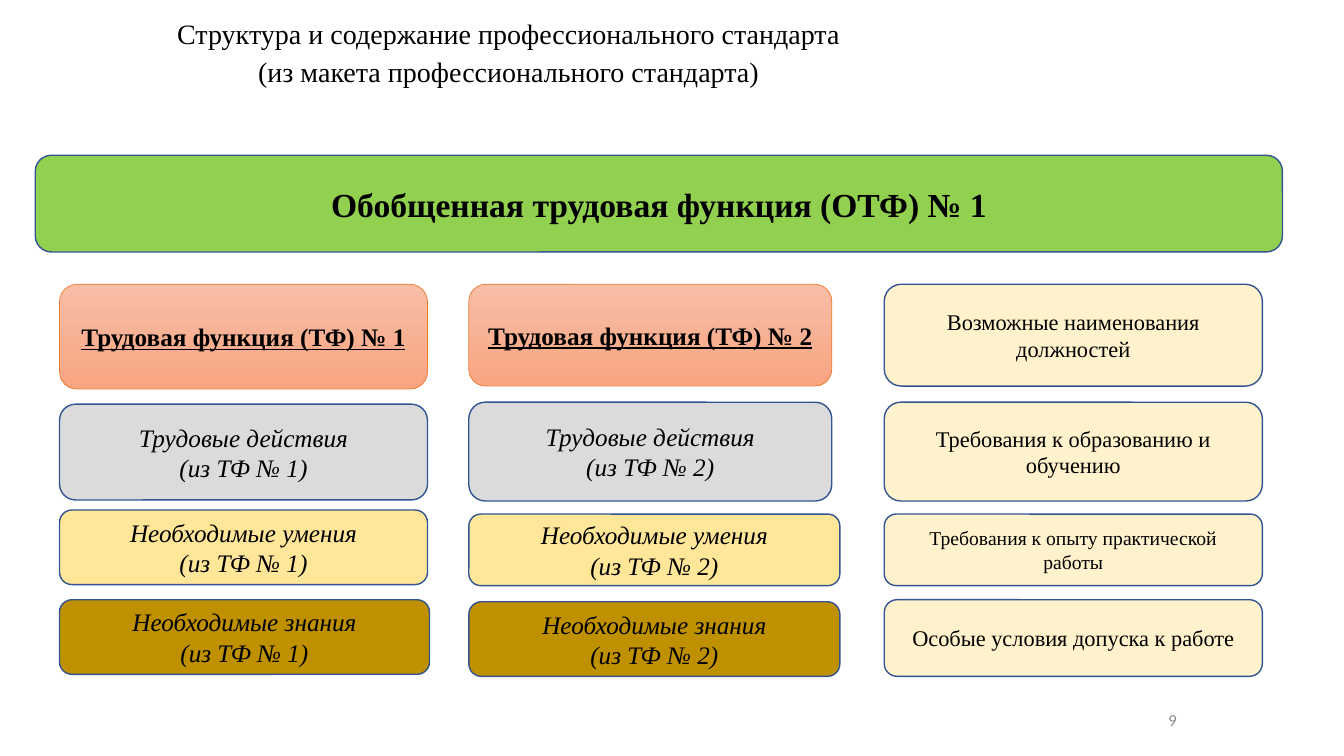
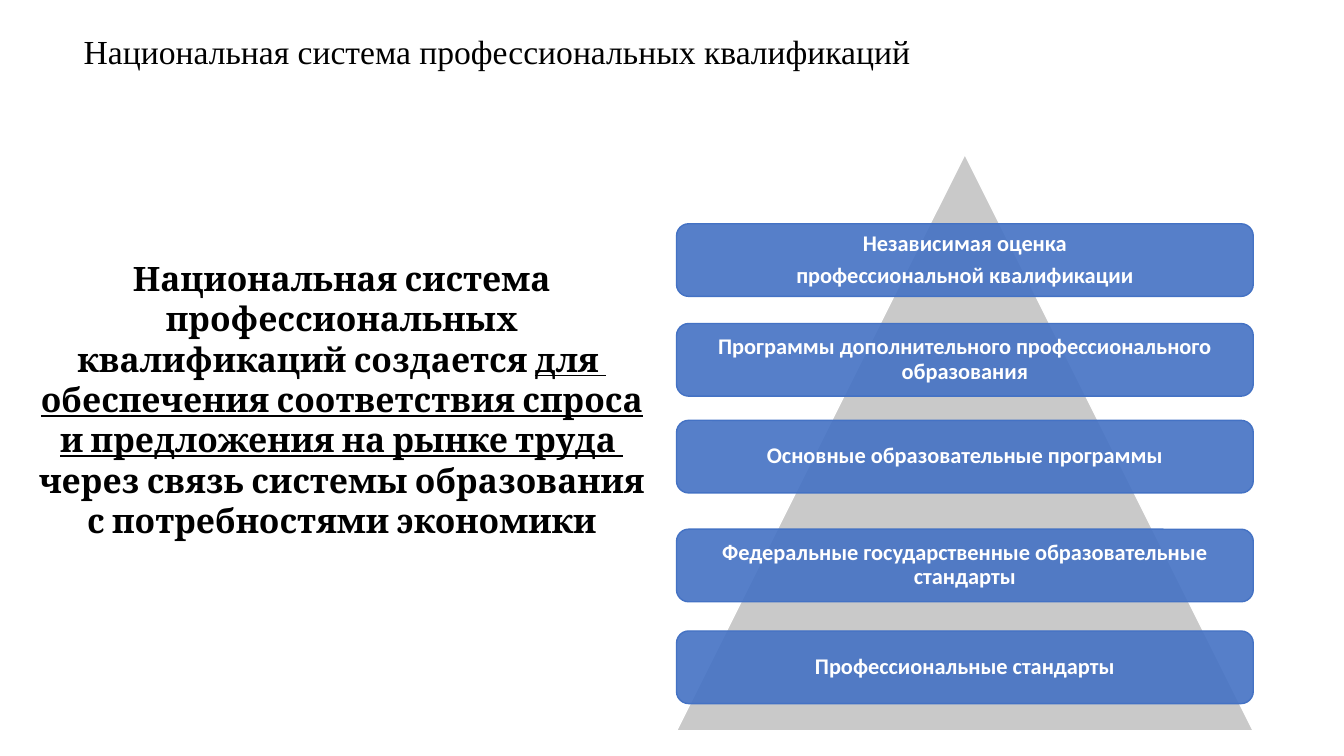
import dataclasses

import pptx
import pptx.dml.color
import pptx.enum.shapes
import pptx.enum.text
import pptx.oxml
import pptx.oxml.ns
import pptx.util

Inches = pptx.util.Inches
Pt = pptx.util.Pt
SHAPE = pptx.enum.shapes.MSO_SHAPE
ALIGN = pptx.enum.text.PP_ALIGN
ANCHOR = pptx.enum.text.MSO_ANCHOR


# Colours, fonts and type sizes
@dataclasses.dataclass(frozen=True)
class Theme:
    serif: str = "Times New Roman"
    sans: str = "Calibri"
    statement: str = "Cambria"
    black: str = "000000"
    white: str = "FFFFFF"
    number: str = "8C8C8C"
    outline: str = "325491"
    orange: str = "ED7D31"
    salmon: tuple = ("F7BDA5", "F8A582")
    green: str = "92D050"
    grey: str = "DBDBDB"
    yellow: str = "FFE699"
    gold: str = "BF9000"
    cream: str = "FFF2CC"
    pyramid: str = "C9C9C9"
    blue: str = "4472C4"
    large: int = 24
    title: int = 20
    card: int = 18
    medium: int = 16
    small: int = 14
    tiny: int = 12


T = Theme()


def rgb(value):
    return pptx.dml.color.RGBColor.from_string(value)


# Text
def add_run(p, text, size, font=T.serif, color=T.black, **flags):
    r = p.add_run()
    r.text = text
    r.font.name = font
    r.font.size = Pt(size)
    r.font.color.rgb = rgb(color)
    for flag, value in flags.items():
        setattr(r.font, flag, value)


def add_paragraph(tf, first, align=ALIGN.CENTER, spacing=None, after=None):
    p = tf.paragraphs[0] if first else tf.add_paragraph()
    p.alignment = align
    if spacing:
        p.line_spacing = spacing
    if after:
        p.space_after = Pt(after)
    return p


def write_lines(tf, lines, size, align=ALIGN.CENTER, spacing=None, after=None, **style):
    tf.word_wrap = True
    for i, line in enumerate(lines):
        p = add_paragraph(tf, i == 0, align, spacing, after)
        add_run(p, line, size, **style)


def set_title(s, box, lines, size, anchor, align, spacing, indent=0):
    sp = s.shapes.title
    sp.left, sp.top, sp.width, sp.height = map(Inches, box)
    tf = sp.text_frame
    tf.auto_size = pptx.enum.text.MSO_AUTO_SIZE.NONE
    tf.vertical_anchor = anchor
    write_lines(tf, lines, size, align, spacing)
    if indent:
        for p in tf.paragraphs:
            p._p.get_or_add_pPr().set("indent", str(Inches(indent)))


def add_text_box(s, box, anchor=ANCHOR.TOP):
    tf = s.shapes.add_textbox(*map(Inches, box)).text_frame
    tf.word_wrap = True
    tf.vertical_anchor = anchor
    return tf


# Shapes
def add_shape(s, kind, box, fill, line, width=1):
    sp = s.shapes.add_shape(kind, *map(Inches, box))
    sp.shadow.inherit = False
    if isinstance(fill, tuple):
        sp.fill.gradient()
        sp.fill.gradient_angle = 270
        for stop, color in zip(sp.fill.gradient_stops, fill):
            stop.color.rgb = rgb(color)
    else:
        sp.fill.solid()
        sp.fill.fore_color.rgb = rgb(fill)
    sp.line.color.rgb = rgb(line)
    sp.line.width = Pt(width)
    return sp


def add_card(s, box, lines, fill, size=T.card, line=T.outline, width=1, **style):
    sp = add_shape(s, SHAPE.ROUNDED_RECTANGLE, box, fill, line, width)
    sp.text_frame.vertical_anchor = ANCHOR.MIDDLE
    write_lines(sp.text_frame, lines, size, **style)
    return sp


def set_opacity(sp, percent):
    color = sp._element.spPr.find(".//" + pptx.oxml.ns.qn("a:srgbClr"))
    alpha = pptx.oxml.parse_xml(
        f'<a:alpha {pptx.oxml.ns.nsdecls("a")} val="{percent * 1000}"/>')
    color.append(alpha)


# A labour function with its actions, skills and knowledge
def add_function_column(s, number, left, header, parts):
    top, height, width = header
    add_card(s, (left, top, width, height), [f"Трудовая функция (ТФ) № {number}"],
             T.salmon, line=T.orange, width=0.5, bold=True, underline=True)
    kinds = (("Трудовые действия", T.grey), ("Необходимые умения", T.yellow),
             ("Необходимые знания", T.gold))
    for (label, fill), (top, height, width) in zip(kinds, parts):
        add_card(s, (left, top, width, height), [label, f"(из ТФ № {number})"],
                 fill, italic=True)


def build_structure_slide(prs):
    s = prs.slides.add_slide(prs.slide_layouts[5])
    set_title(s, (-0.34, 0.06, 10.46, 0.84),
              ["Структура и содержание профессионального стандарта",
               "(из макета профессионального стандарта)"],
              T.title, ANCHOR.TOP, ALIGN.CENTER, 1.15, indent=0.31)
    add_card(s, (0.35, 1.54, 12.37, 0.96), ["Обобщенная трудовая функция (ОТФ) № 1"],
             T.green, T.large, bold=True)

    # Each card is top, height, width
    add_function_column(s, 1, 0.59, (2.82, 1.04, 3.65),
                        [(4.01, 0.95, 3.65), (5.06, 0.74, 3.65), (5.95, 0.74, 3.67)])
    add_function_column(s, 2, 4.65, (2.82, 1.01, 3.6),
                        [(3.99, 0.98, 3.6), (5.1, 0.71, 3.68), (5.97, 0.74, 3.68)])

    # Requirements
    requirements = (
        (2.82, 1.01, T.medium, "Возможные наименования должностей"),
        (3.99, 0.98, T.medium, "Требования к образованию и обучению"),
        (5.1, 0.71, T.small, "Требования к опыту практической работы"),
        (5.95, 0.76, T.medium, "Особые условия допуска к работе"),
    )
    for top, height, size, label in requirements:
        add_card(s, (8.77, top, 3.75, height), [label], T.cream, size)

    # Page number
    tf = add_text_box(s, (10.13, 6.94, 3, 0.4), ANCHOR.MIDDLE)
    write_lines(tf, ["9"], T.tiny, font=T.sans, color=T.number)


def build_system_slide(prs):
    s = prs.slides.add_slide(prs.slide_layouts[5])
    set_title(s, (0.73, 0.16, 10.32, 0.74),
              ["Национальная система профессиональных квалификаций"],
              T.large, ANCHOR.MIDDLE, ALIGN.LEFT, 0.9)

    # Pyramid with its levels
    left, width = 6.71, 5.72
    add_shape(s, SHAPE.ISOSCELES_TRIANGLE, (left, 1.53, width, width), T.pyramid, T.white)
    levels = (
        (2.22, ["Независимая оценка", "профессиональной квалификации"]),
        (3.21, ["Программы дополнительного профессионального образования"]),
        (4.17, ["Основные образовательные программы"]),
        (5.25, ["Федеральные государственные образовательные стандарты"]),
        (6.26, ["Профессиональные стандарты"]),
    )
    for top, lines in levels:
        sp = add_card(s, (left, top, width, 0.72), lines, T.blue, T.medium, line=T.blue,
                      spacing=0.9, after=5.6, font=T.sans, color=T.white, bold=True)
        set_opacity(sp, 90)

    # Purpose statement: runs of text and whether each is underlined
    purpose = (
        (("Национальная система профессиональных квалификаций создается ", False),
         ("для ", True)),
        (("обеспечения соответствия спроса и предложения на рынке труда ", True),),
        (("через связь системы образования с потребностями экономики", False),),
    )
    tf = add_text_box(s, (0.22, 2.51, 6.34, 2.93))
    for i, runs in enumerate(purpose):
        p = add_paragraph(tf, i == 0)
        for text, underline in runs:
            add_run(p, text, T.large, T.statement, bold=True, underline=underline)


def main():
    prs = pptx.Presentation()
    prs.slide_width, prs.slide_height = Inches(13.33), Inches(7.5)
    build_structure_slide(prs)
    build_system_slide(prs)
    prs.save("out.pptx")


if __name__ == "__main__":
    main()
